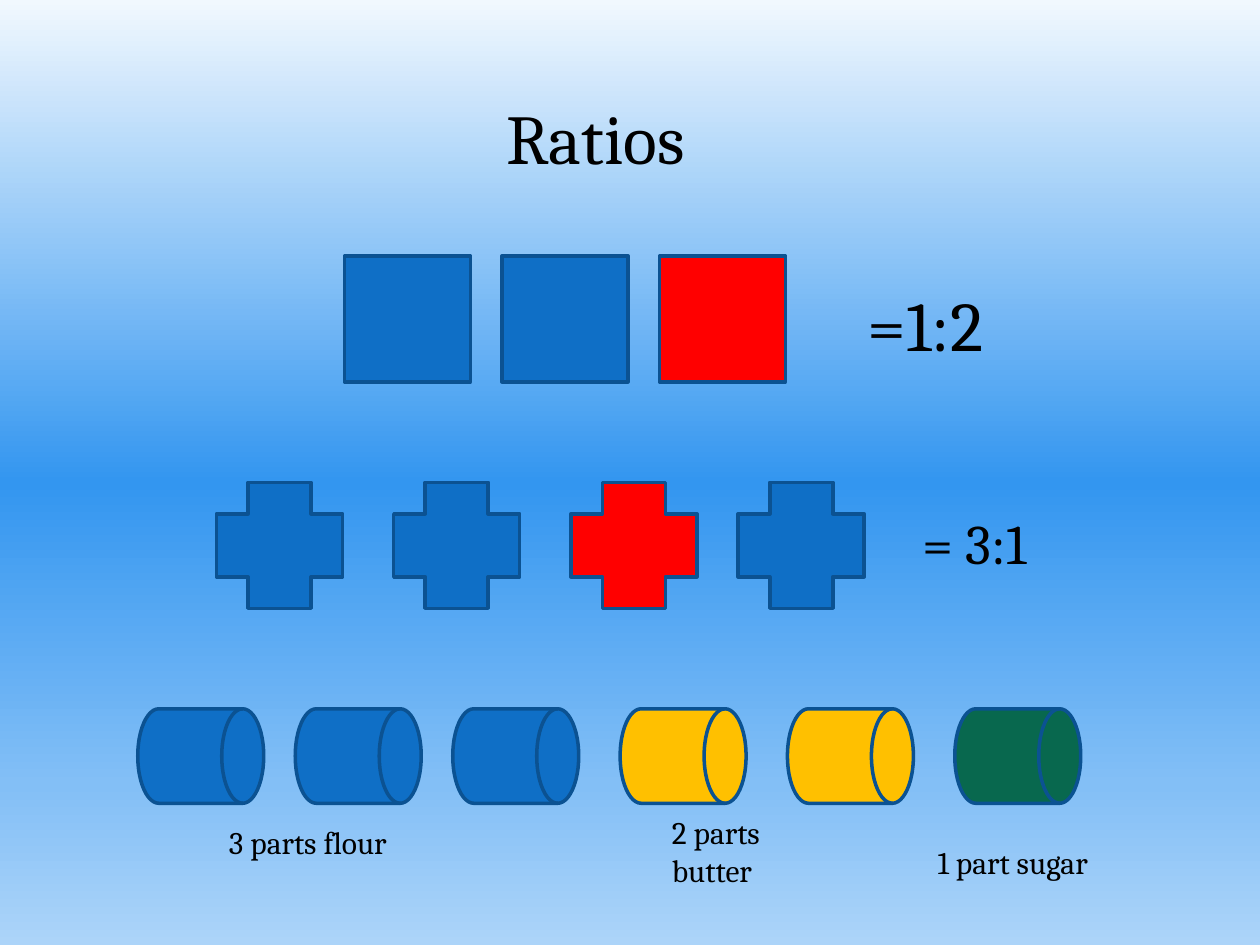
"""Build a slide that explains ratios with rows of coloured shapes."""
import pptx
import pptx.dml.color
import pptx.enum.shapes
import pptx.enum.text
import pptx.oxml
import pptx.oxml.ns
import pptx.util

SHAPE = pptx.enum.shapes.MSO_SHAPE
ALIGN = pptx.enum.text.PP_ALIGN
WIDTH, HEIGHT = pptx.util.Inches(10), pptx.util.Inches(7.5)
COLUMNS, ROWS = 96, 72
COLORS = {
    "blue": "0F6FC6",
    "red": "FF0000",
    "yellow": "FFC000",
    "green": "08684E",
    "outline": "0B5292",
    "text": "000000",
}
SKY = {0: "F1F8FE", 51: "3396F0", 83: "83BFF6", 100: "ACD4F9"}


def rgb(name):
    """Return the palette colour of that name."""
    return pptx.dml.color.RGBColor.from_string(COLORS[name])


def place(column, row, columns, rows):
    """Turn a grid cell range into left, top, width and height."""
    return (
        round(column * WIDTH / COLUMNS),
        round(row * HEIGHT / ROWS),
        round(columns * WIDTH / COLUMNS),
        round(rows * HEIGHT / ROWS),
    )


def paint_background(slide):
    """Fill the slide with the sky gradient from top to bottom."""
    fill = slide.background.fill
    fill.gradient()
    fill.gradient_angle = 270
    stops = slide.element.find(".//" + pptx.oxml.ns.qn("a:gsLst"))
    stops.clear()
    for percent, color in SKY.items():
        stops.append(pptx.oxml.parse_xml(
            f'<a:gs {pptx.oxml.ns.nsdecls("a")} pos="{percent * 1000}">'
            f'<a:srgbClr val="{color}"/></a:gs>'
        ))


def add_text(slide, text, area, size=18, align=ALIGN.LEFT, font="Cambria", color="text"):
    """Add a wrapped text box on the grid."""
    frame = slide.shapes.add_textbox(*place(*area)).text_frame
    frame.word_wrap = True
    frame.auto_size = pptx.enum.text.MSO_AUTO_SIZE.SHAPE_TO_FIT_TEXT
    paragraph = frame.paragraphs[0]
    paragraph.alignment = align
    run = paragraph.add_run()
    run.text = text
    run.font.name = font
    run.font.size = pptx.util.Pt(size)
    run.font.color.rgb = rgb(color)


def add_parts(slide, kind, column, row, pitch, colors, rows=9.6):
    """Add equally spaced shapes, one for each colour."""
    for index, color in enumerate(colors):
        part = slide.shapes.add_shape(kind, *place(column + index * pitch, row, 9.6, rows))
        part.shadow.inherit = False
        part.fill.solid()
        part.fill.fore_color.rgb = rgb(color)
        part.line.color.rgb = rgb("outline")
        part.line.width = pptx.util.Pt(2)


def main():
    """Build and save the slide."""
    deck = pptx.Presentation()
    deck.slide_width, deck.slide_height = WIDTH, HEIGHT
    slide = deck.slides.add_slide(deck.slide_layouts[6])
    paint_background(slide)

    add_text(slide, "Ratios", (6, 6.75, 78.75, 30.72), size=40, align=ALIGN.CENTER)

    add_parts(slide, SHAPE.RECTANGLE, 26.25, 19.5, 12, ["blue", "blue", "red"])
    add_text(slide, "=1:2", (61.5, 21, 18, 7.4), size=40, align=ALIGN.CENTER)

    add_parts(slide, SHAPE.CROSS, 16.5, 36.75, 13.5, ["blue", "blue", "red"])
    add_parts(slide, SHAPE.CROSS, 56.25, 36.75, 13.5, ["blue"])
    add_text(slide, "= 3:1", (66.75, 38.25, 15, 6.1), size=32, align=ALIGN.CENTER)

    drum = SHAPE.FLOWCHART_DIRECT_ACCESS_STORAGE
    add_parts(slide, drum, 10.5, 54, 12, ["blue"] * 3, rows=7.2)
    add_parts(slide, drum, 47.25, 54, 12.75, ["yellow", "yellow", "green"], rows=7.2)
    add_text(slide, "3 parts flour", (16.5, 62.25, 18.75, 3.9))
    add_text(slide, "2 parts butter", (50.25, 61.5, 14.25, 6.8))
    add_text(slide, "1 part sugar", (70.5, 63.75, 16.5, 3.9))

    deck.save("out.pptx")


if __name__ == "__main__":
    main()
